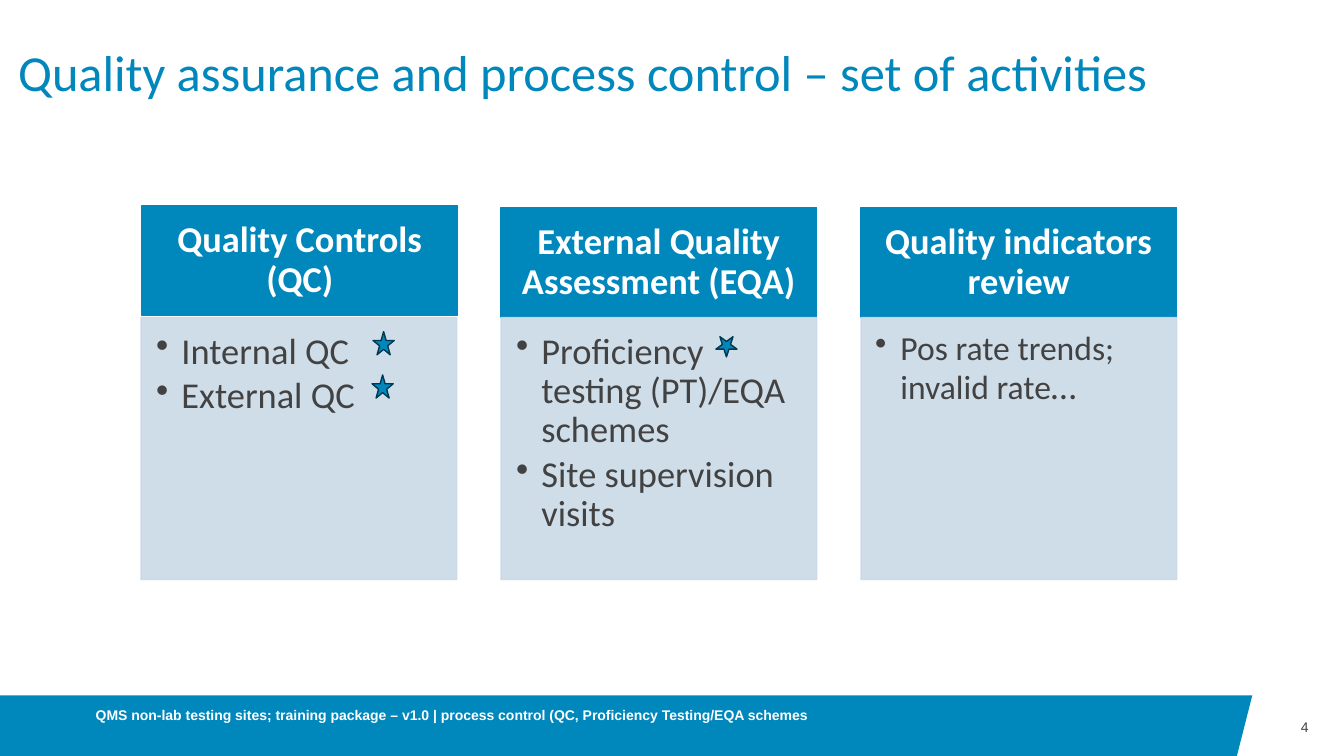
from lxml import etree
from pptx import Presentation
from pptx.dml.color import RGBColor
from pptx.enum.shapes import MSO_SHAPE
from pptx.enum.text import MSO_ANCHOR, MSO_AUTO_SIZE, PP_ALIGN
from pptx.oxml.ns import qn
from pptx.util import Inches, Pt

RECT, STAR = MSO_SHAPE.RECTANGLE, MSO_SHAPE.STAR_5_POINT
TOP, MIDDLE = MSO_ANCHOR.TOP, MSO_ANCHOR.MIDDLE
LEFT, CENTER, RIGHT = PP_ALIGN.LEFT, PP_ALIGN.CENTER, PP_ALIGN.RIGHT
NO_FIT = MSO_AUTO_SIZE.NONE

BLUE = RGBColor(0x00, 0x87, 0xBC)
PALE = RGBColor(0xCA, 0xD9, 0xE7)
NAVY = RGBColor(0x00, 0x38, 0x4F)
GREY = RGBColor(0x42, 0x42, 0x42)
WHITE = RGBColor(0xFF, 0xFF, 0xFF)

CARD_W, HEAD_H, BODY_TOP, BODY_H = 3.13, 1.09, 3.15, 2.6

# Header left, header top, body left, heading, bullets as lists of (text, size) runs, body insets
CARDS = [
    (1.41, 2.04, 1.4, "Quality Controls (QC)",
     [[("Internal QC", 26)], [("External QC", 26)]], (0.15, 0.15, 0.2, 0.23)),
    (4.97, 2.06, 4.97, "External Quality Assessment (EQA)",
     [[("Proficiency testing (PT)/EQA \vschemes", 26)], [("Site supervision visits", 26)]],
     (0.15, 0.15, 0.2, 0.23)),
    (8.54, 2.06, 8.54, "Quality indicators review",
     [[("Pos rate trends; invalid rate", 24), ("…", 26)]], (0.14, 0.14, 0.19, 0.21)),
]
# Left, top, height, rotation
STARS = [(3.7, 3.29, 0.23, 0), (3.69, 3.72, 0.23, 0), (7.1, 3.34, 0.2, 180)]


class SlideBuilder:
    heading_font, small_font = "Calibri", "Arial"

    def __init__(self, slide):
        self.slide = slide

    def frame(self, sp, insets=(0, 0, 0, 0), anchor=MIDDLE):
        """Set wrapping, insets (left, top, right, bottom) and anchor."""
        tf = sp.text_frame
        tf.word_wrap = True
        tf.auto_size = NO_FIT
        tf.vertical_anchor = anchor
        tf.margin_left, tf.margin_top, tf.margin_right, tf.margin_bottom = map(Inches, insets)
        return tf

    def style(self, p, font, size, color, bold=False, align=LEFT, spacing=None):
        p.font.name, p.font.size, p.font.bold = font, Pt(size), bold
        p.font.color.rgb = color
        p.alignment = align
        if spacing:
            p.line_spacing = spacing

    def title(self, text):
        sp = self.slide.shapes.title
        sp.left, sp.top, sp.width, sp.height = map(Inches, (0, 0.23, 12.97, 1.03))
        tf = self.frame(sp, (0.18, 0, 0, 0))
        tf.text = text
        self.style(tf.paragraphs[0], self.heading_font, 36, BLUE, spacing=0.9)

    def footer_band(self):
        fb = self.slide.shapes.build_freeform(Inches(0), Inches(6.9))
        corners = [(12.42, 6.9), (12.26, 7.53), (0, 7.53)]
        fb.add_line_segments([(Inches(x), Inches(y)) for x, y in corners], close=True)
        sp = fb.convert_to_shape()
        sp.shadow.inherit = False
        sp.fill.solid()
        sp.fill.fore_color.rgb = BLUE
        sp.line.fill.background()

    def small_text(self, text, left, top, width, height, color, bold=False, align=LEFT):
        sp = self.slide.shapes.add_textbox(*map(Inches, (left, top, width, height)))
        tf = self.frame(sp)
        tf.text = text
        self.style(tf.paragraphs[0], self.small_font, 10, color, bold, align)

    def shape(self, kind, left, top, width, height, fill, line):
        sp = self.slide.shapes.add_shape(kind, *map(Inches, (left, top, width, height)))
        sp.shadow.inherit = False
        sp.fill.solid()
        sp.fill.fore_color.rgb = fill
        sp.line.color.rgb = line
        sp.line.width = Pt(1)
        return sp

    def card_head(self, left, top, text):
        sp = self.shape(RECT, left, top, CARD_W, HEAD_H, BLUE, BLUE)
        tf = self.frame(sp, (0.2, 0.12, 0.2, 0.12))
        tf.text = text
        self.style(tf.paragraphs[0], self.heading_font, 26, WHITE, True, CENTER, 0.9)

    def card_body(self, left, items, insets):
        sp = self.shape(RECT, left, BODY_TOP, CARD_W, BODY_H, PALE, PALE)
        for clr in sp._element.spPr.iter(qn("a:srgbClr")):
            etree.SubElement(clr, qn("a:alpha"), val="89000")
        tf = self.frame(sp, insets, TOP)
        for i, runs in enumerate(items):
            p = tf.add_paragraph() if i else tf.paragraphs[0]
            for text, size in runs:
                # A vertical tab marks a line break
                for j, part in enumerate(text.split("\v")):
                    if j:
                        p.add_line_break()
                    r = p.add_run()
                    r.text = part
                    r.font.size = Pt(size)
            self.style(p, self.heading_font, 26, GREY, spacing=0.9)
            p.space_before = Pt(3.9 if i else 0)
            self.bullet(p)

    def bullet(self, p):
        pPr = p._p.get_or_add_pPr()
        pPr.set("marL", str(Inches(0.25)))
        pPr.set("indent", str(-Inches(0.25)))
        bu = etree.Element(qn("a:buChar"), char="•")
        pPr.find(qn("a:defRPr")).addprevious(bu)

    def star(self, left, top, height, rotation):
        sp = self.shape(STAR, left, top, 0.21, height, BLUE, NAVY)
        sp.rotation = rotation


def main():
    prs = Presentation()
    prs.slide_width, prs.slide_height = Inches(13.33), Inches(7.5)
    s = SlideBuilder(prs.slides.add_slide(prs.slide_layouts[5]))
    s.footer_band()
    s.title("Quality assurance and process control – set of activities")
    s.small_text("4", 12.42, 6.9, 0.56, 0.63, GREY, align=RIGHT)
    s.small_text("QMS non-lab testing sites; training package – v1.0 | "
                 "process control (QC, Proficiency Testing/EQA schemes",
                 0.95, 6.9, 8, 0.39, WHITE, bold=True)
    for head_left, head_top, body_left, heading, items, insets in CARDS:
        s.card_head(head_left, head_top, heading)
        s.card_body(body_left, items, insets)
    for star in STARS:
        s.star(*star)
    prs.save("out.pptx")


if __name__ == "__main__":
    main()
